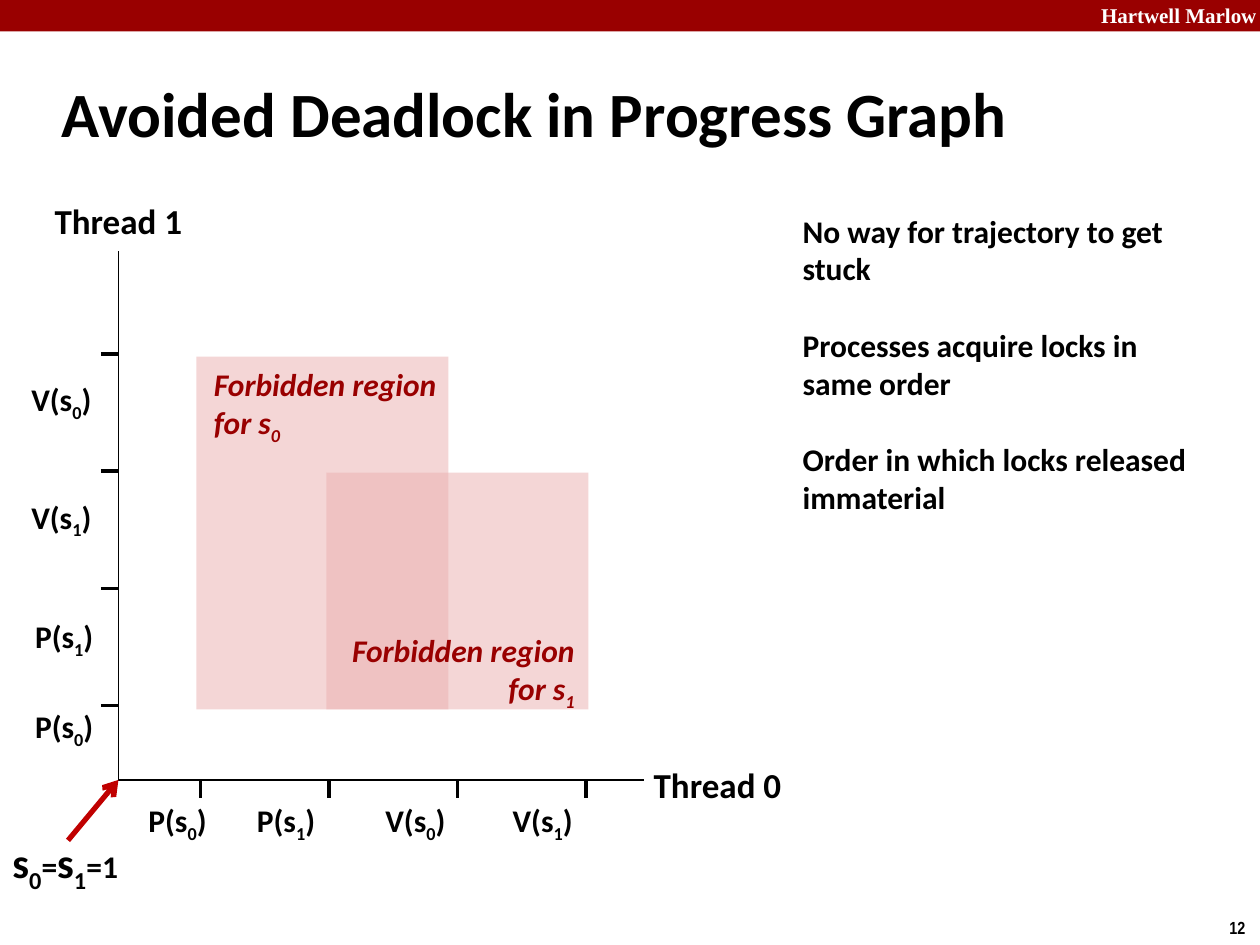
from pptx import Presentation
from pptx.dml.color import RGBColor as RGB
from pptx.enum.shapes import MSO_CONNECTOR as LINE, MSO_SHAPE as SHAPE
from pptx.enum.text import MSO_ANCHOR as ANCHOR, MSO_AUTO_SIZE as AUTO, PP_ALIGN as ALIGN
from pptx.oxml.ns import qn
from pptx.util import Inches, Pt
from lxml.etree import SubElement

BLACK, WHITE = RGB(0, 0, 0), RGB(255, 255, 255)
RED, PINK, ARROW = RGB(0x99, 0, 0), RGB(0xEB, 0xAF, 0xAF), RGB(0xC0, 0, 0)

# Content: "_" puts the next letter in subscript
TITLE = "Avoided Deadlock in Progress Graph"
NOTES = ["No way for trajectory to get stuck",
         "Processes acquire locks in same order",
         "Order in which locks released immaterial"]
START = [("s_0", 24), ("=", 18), ("s_1", 24), ("=1", 18)]
AXES = [("Thread 0", (5.08, 6.01, 1.23, 0.44)),
        ("Thread 1", (0.33, 1.53, 1.22, 0.44))]
ACROSS = [("P(s_0)", 1.08), ("P(s_1)", 1.94), ("V(s_0)", 2.96), ("V(s_1)", 3.97)]
UP = [("P(s_0)", 0.18, 5.58), ("P(s_1)", 0.18, 4.87),
      ("V(s_1)", 0.15, 3.92), ("V(s_0)", 0.15, 2.99)]
ZONES = [(1.56, 2.83, 2, 2.8), (2.59, 3.75, 2.08, 1.88)]
ZONE_TEXT = [("for s_0", (1.6, 2.85, 2.06, 0.71), ALIGN.LEFT),
             ("for s_1", (2.61, 4.96, 2.05, 0.71), ALIGN.RIGHT)]

# Axes and ticks
LEFT, BASE, RIGHT, TOP = 0.94, 6.19, 5.11, 1.99
TICK = 0.14
TICK_X, STEP_X = 1.59, 1.02
TICK_Y, STEP_Y = 5.6, 0.93

FONT = dict(name="Calibri", size=Pt(18), bold=True)
FRAME = dict(word_wrap=False, auto_size=AUTO.NONE, vertical_anchor=ANCHOR.MIDDLE)

deck = Presentation()
deck.slide_width, deck.slide_height = Inches(10), Inches(7.5)
slide = deck.slides.add_slide(deck.slide_layouts[1])
shapes = slide.shapes


def assign(item, values):
    for key, value in values.items():
        setattr(item, key, value)


def write(par, text, color=BLACK, **font):
    """Add text to a paragraph, with subscripts after each "_"."""
    first, *rest = text.split("_")
    parts = [(first, False)]
    for part in rest:
        parts += [(part[0], True), (part[1:], False)]
    for piece, low in parts:
        if piece:
            run = par.add_run()
            run.text = piece
            assign(run.font, FONT | font)
            run.font.color.rgb = color
            if low:
                run._r.get_or_add_rPr().set("baseline", "-25000")


def place(shape, box):
    names = ("left", "top", "width", "height")
    assign(shape, dict(zip(names, map(Inches, box))))


def label(box, lines, align=ALIGN.LEFT, frame=None, **font):
    text = shapes.add_textbox(*map(Inches, box)).text_frame
    assign(text, FRAME | (frame or {}))
    for i, line in enumerate(lines):
        par = text.add_paragraph() if i else text.paragraphs[0]
        par.alignment = align
        write(par, line, **font)
    return text


def block(box, color, alpha=None):
    rect = shapes.add_shape(SHAPE.RECTANGLE, *map(Inches, box))
    rect.shadow.inherit = False
    rect.fill.solid()
    rect.fill.fore_color.rgb = color
    rect.line.fill.background()
    if alpha:
        tint = rect._element.spPr.find(".//" + qn("a:srgbClr"))
        SubElement(tint, qn("a:alpha")).set("val", str(alpha * 1000))


def line(x1, y1, x2, y2, width, color=BLACK, head=False):
    link = shapes.add_connector(LINE.STRAIGHT, *map(Inches, (x1, y1, x2, y2)))
    link.line.width = Pt(width)
    link.line.color.rgb = color
    if head:
        SubElement(link.line._get_or_add_ln(), qn("a:tailEnd")).set("type", "arrow")
    SubElement(link._element.spPr, qn("a:effectLst"))


# Top band and page number
block((0, 0, 10, 0.25), RED)
top = dict(vertical_anchor=ANCHOR.TOP)
label((8.64, -0.03, 1.43, 0.3), ["Hartwell Marlow"], frame=top, color=WHITE,
      name="Times New Roman", size=Pt(12))
label((9.66, 7.23, 0.34, 0.27), ["12"], frame=top, name="Arial Narrow", size=Pt(10))

# Title
title = shapes.title
place(title, (0.39, 0.48, 8.3, 0.83))
assign(title.text_frame, FRAME | dict(word_wrap=True))
head = title.text_frame.paragraphs[0]
head.alignment = ALIGN.LEFT
write(head, TITLE, size=Pt(36))

# Axes with ticks and labels
line(LEFT, BASE, RIGHT, BASE, 1)
line(LEFT, BASE, LEFT, TOP, 1)
for name, box in AXES:
    label(box, [name], ALIGN.CENTER, size=Pt(20))
for i, (name, x) in enumerate(ACROSS):
    tick = TICK_X + i * STEP_X
    line(tick, BASE, tick, BASE + TICK, 2)
    label((x, 6.33, 0.69, 0.4), [name])
for i, (name, x, y) in enumerate(UP):
    tick = TICK_Y - i * STEP_Y
    line(LEFT - TICK, tick, LEFT, tick, 2)
    label((x, y, 0.69, 0.4), [name])

# Forbidden regions
for box in ZONES:
    block(box, PINK, 50)
for name, box, align in ZONE_TEXT:
    label(box, ["Forbidden region", name], align, top, color=RED, italic=True)

# Start point
start = label((0, 6.67, 1.08, 0.4), [], frame=dict(margin_top=0, margin_bottom=0))
for text, size in START:
    write(start.paragraphs[0], text, size=Pt(size))
line(0.54, 6.67, LEFT, BASE, 3, ARROW, True)

# Notes on the right
body = slide.placeholders[1]
place(body, (6.27, 1.68, 3.4, 2.4))
frame = body.text_frame
assign(frame, FRAME | top | dict(word_wrap=True, margin_top=0, margin_bottom=0))
for i, note in enumerate(NOTES):
    par = frame.add_paragraph() if i else frame.paragraphs[0]
    par.space_before = Pt(22 if i else 0)
    props = par._p.get_or_add_pPr()
    assign_xml = dict(marL="0", indent="0")
    for key, value in assign_xml.items():
        props.set(key, value)
    SubElement(props, qn("a:buNone"))
    write(par, note)

deck.save("out.pptx")
